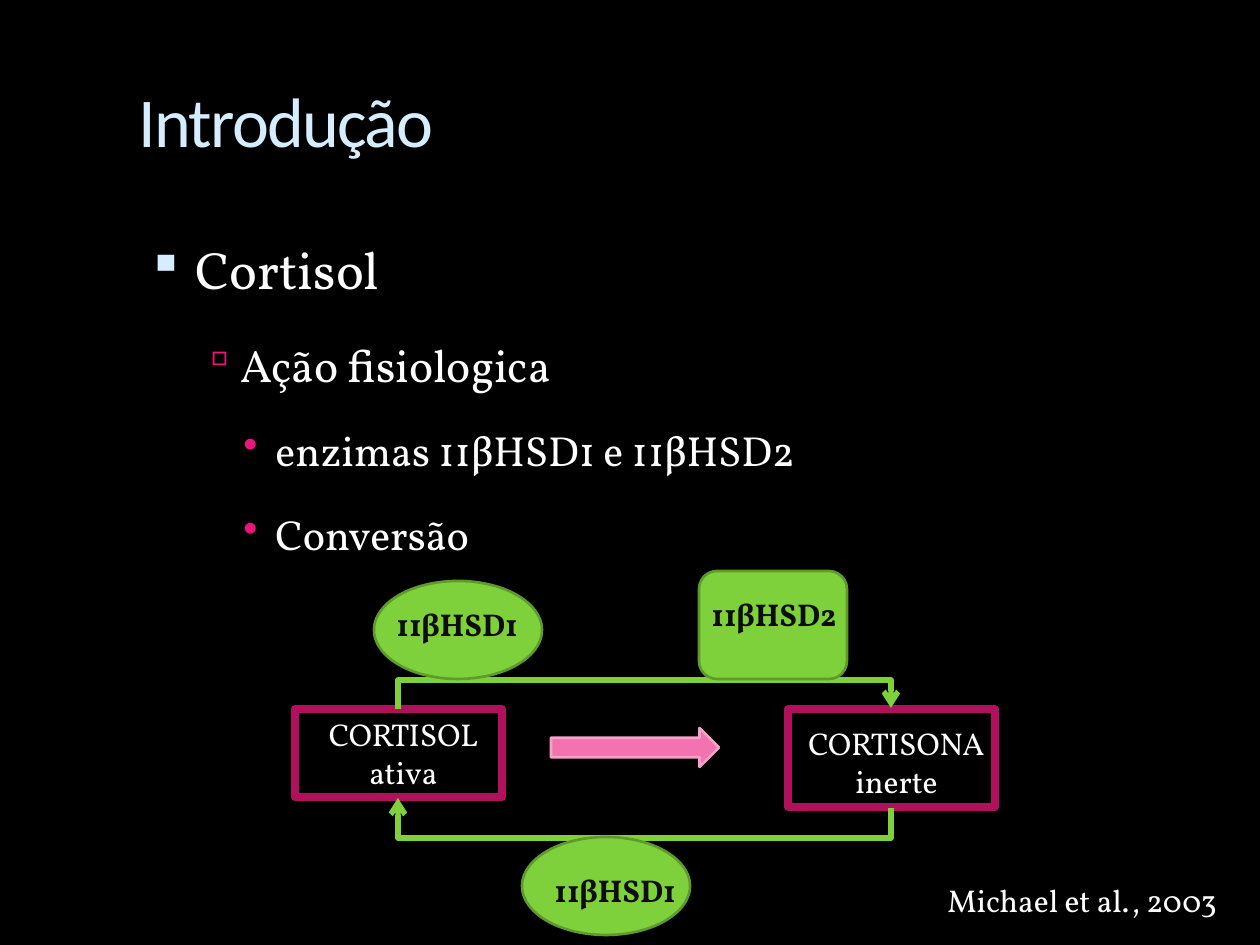
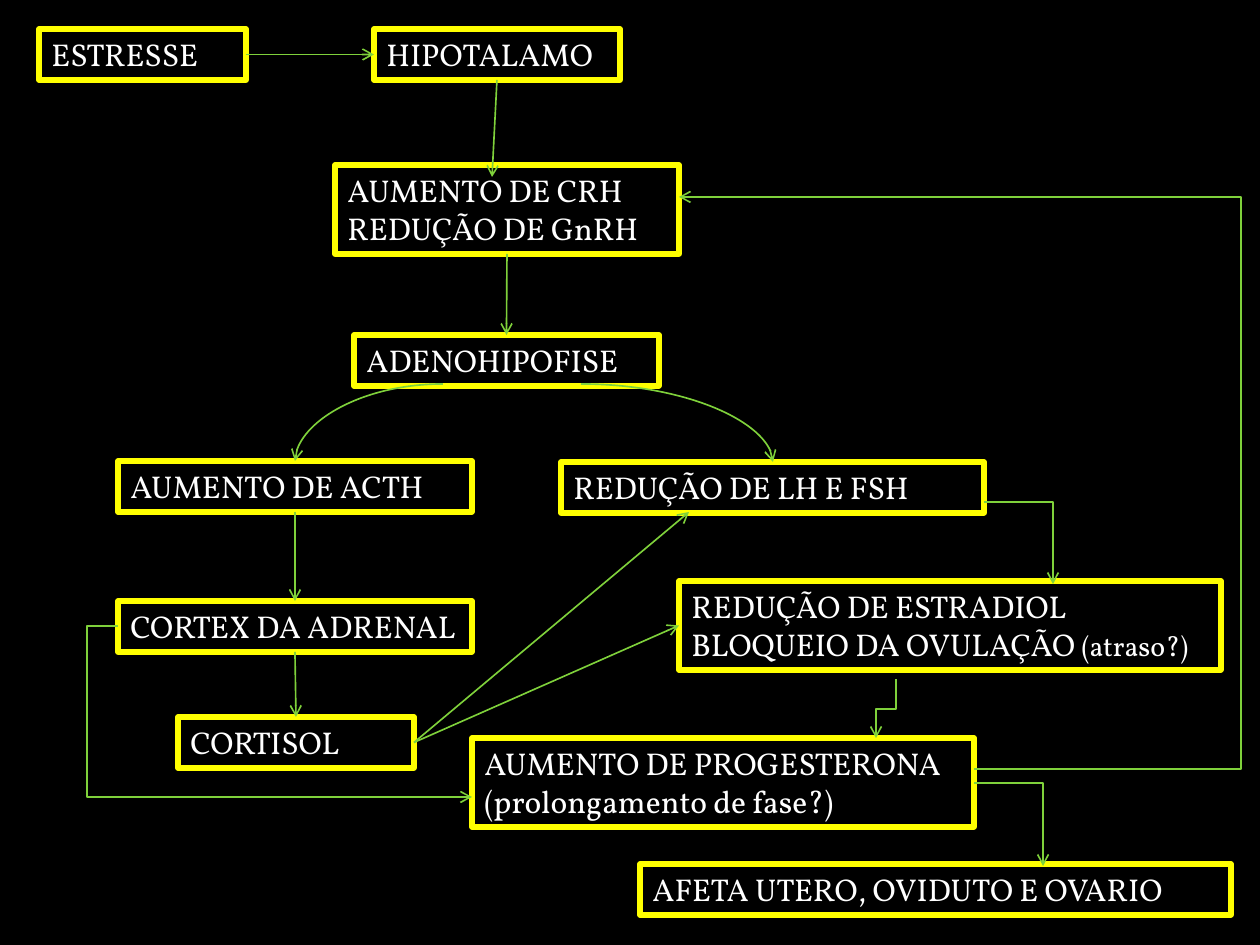
from pptx import Presentation
from pptx.dml.color import RGBColor
from pptx.enum.shapes import MSO_CONNECTOR, MSO_SHAPE
from pptx.enum.text import MSO_ANCHOR, PP_ALIGN
from pptx.oxml.ns import qn
from pptx.util import Pt
from lxml.etree import SubElement

SCALE = 914400 / 126  # EMU per px
BLACK = RGBColor(0, 0, 0)
WHITE = RGBColor(255, 255, 255)
INK = RGBColor(0x0D, 0x0D, 0x0D)
PALE_BLUE = RGBColor(0xD6, 0xEC, 0xFF)
MAGENTA = RGBColor(0xEA, 0x15, 0x7A)
DARK_MAGENTA = RGBColor(0xB0, 0x10, 0x5C)
PINK = RGBColor(0xF2, 0x73, 0xAF)
LIGHT_PINK = RGBColor(0xF7, 0xA1, 0xCA)
GREEN = RGBColor(0x7F, 0xD1, 0x3B)
DARK_GREEN = RGBColor(0x5E, 0x9B, 0x2C)
YELLOW = RGBColor(255, 255, 0)
BODY_FONT, TITLE_FONT = "Vollkorn", "Calibri"
TOP, LEFT, BOTTOM, RIGHT = range(4)
THIN = 0.94


def emu(*lengths):
    return [round(length * SCALE) for length in lengths]


def add_page(deck, layout):
    page = deck.slides.add_slide(deck.slide_layouts[layout])
    page.background.fill.solid()
    page.background.fill.fore_color.rgb = BLACK
    return page


def write(para, text, size=18, color=WHITE, font=BODY_FONT, bold=False):
    span = para.add_run()
    span.text = text
    span.font.size = Pt(size)
    span.font.color.rgb = color
    span.font.name = font
    span.font.bold = bold
    return span


def add_title(page, text):
    title = page.shapes.title
    title.left, title.top, title.width, title.height = emu(126, 71, 1071, 126)
    title.text_frame.vertical_anchor = MSO_ANCHOR.TOP
    para = title.text_frame.paragraphs[0]
    para.alignment = PP_ALIGN.LEFT
    span = write(para, text, size=40, color=PALE_BLUE, font=TITLE_FONT)
    span.font._element.set("spc", "-100")


def add_text(page, area, *lines, align=PP_ALIGN.LEFT, border=None, **style):
    box = page.shapes.add_textbox(*emu(*area))
    box.text_frame.word_wrap = True
    if border:
        box.line.color.rgb = border
        box.line.width = Pt(3)
    for number, line in enumerate(lines):
        frame = box.text_frame
        para = frame.add_paragraph() if number else frame.paragraphs[0]
        para.alignment = align
        write(para, line, **style)
    return box


def set_bullet(para, mark, color, percent, margin, indent):
    props = para._p.get_or_add_pPr()
    props.set("marL", str(*emu(margin)))
    props.set("indent", str(*emu(indent)))
    tint = SubElement(props, qn("a:buClr"))
    SubElement(tint, qn("a:srgbClr")).set("val", str(color))
    SubElement(props, qn("a:buSzPct")).set("val", str(percent * 1000))
    SubElement(props, qn("a:buChar")).set("char", mark)


def add_outline(page, area, items):
    """Bulleted list; items are (level, text)."""
    # size, line spacing, space before, then the bullet format
    levels = [
        (30, 2.0, 7, ("▪", PALE_BLUE, 95, 57, -48)),
        (26, 1.5, 5.2, ("▫", MAGENTA, 90, 102, -39)),
        (24, 1.5, 4.8, ("•", MAGENTA, 100, 137, -32)),
    ]
    box = add_text(page, area, *[text for _, text in items])
    for para, (level, _) in zip(box.text_frame.paragraphs, items):
        size, spacing, before, bullet = levels[level]
        para.level = level
        para.line_spacing = spacing
        para.space_before = Pt(before)
        para.runs[0].font.size = Pt(size)
        set_bullet(para, *bullet)


def add_figure(page, kind, area, line, fill=None, width=1.5):
    figure = page.shapes.add_shape(kind, *emu(*area))
    figure.shadow.inherit = False
    if fill is None:
        figure.fill.background()
    else:
        figure.fill.solid()
        figure.fill.fore_color.rgb = fill
    figure.line.color.rgb = line
    figure.line.width = Pt(width)


def style_arrow(arrow, width):
    arrow.line.color.rgb = GREEN
    arrow.line.width = Pt(width)
    props = arrow.element.spPr
    SubElement(props.find(qn("a:ln")), qn("a:tailEnd")).set("type", "arrow")
    SubElement(props, qn("a:effectLst"))


def add_arrow(page, start, end):
    """Straight arrow; each end is a (box, side) pair or an (x, y) point."""
    arrow = page.shapes.add_connector(MSO_CONNECTOR.STRAIGHT, 0, 0, 0, 0)
    if isinstance(start[0], int):
        arrow.begin_x, arrow.begin_y = emu(*start)
    else:
        arrow.begin_connect(*start)
    if isinstance(end[0], int):
        arrow.end_x, arrow.end_y = emu(*end)
    else:
        arrow.end_connect(*end)
    style_arrow(arrow, THIN)


def add_route(page, start, end, via_x=None, via_y=None, curved=False, width=THIN):
    """Arrow with one corner, or two on the line x = via_x or y = via_y."""
    (x0, y0), (x1, y1) = start, end
    dx, dy = x1 - x0, y1 - y0
    if via_y is not None:  # leaves vertically: lay it flat, then turn it by 90°
        mid_x, mid_y = (x0 + x1) / 2, (y0 + y1) / 2
        start = mid_x - dy / 2, mid_y + dx / 2
        end = mid_x + dy / 2, mid_y - dx / 2
    kind = MSO_CONNECTOR.CURVE if curved else MSO_CONNECTOR.ELBOW
    route = page.shapes.add_connector(kind, *emu(*start, *end))
    geometry = route.element.spPr.find(qn("a:prstGeom"))
    if via_x is None and via_y is None:
        geometry.set("prst", "curvedConnector2" if curved else "bentConnector2")
    else:
        share = (via_x - x0) / dx if via_y is None else (via_y - y0) / dy
        guide = SubElement(geometry.get_or_add_avLst(), qn("a:gd"))
        guide.set("name", "adj1")
        guide.set("fmla", f"val {round(share * 100000)}")
    if via_y is not None:
        route.rotation = 90 if hasattr(type(route), "rotation") else 0
        route.element.spPr.find(qn("a:xfrm")).set("rot", "5400000")
    style_arrow(route, width)


def build_introduction(deck):
    page = add_page(deck, 5)
    add_title(page, "Introdução")
    add_outline(page, (126, 168, 1071, 630), [
        (0, "Cortisol"),
        (1, "Ação fisiologica"),
        (2, "enzimas 11βHSD1 e 11βHSD2"),
        (2, "Conversão"),
    ])
    center = PP_ALIGN.CENTER
    add_text(page, (305, 709, 197, 89), "CORTISOL ativa", align=center)
    add_figure(page, MSO_SHAPE.RIGHT_ARROW, (551, 728, 168, 39), LIGHT_PINK, PINK)
    add_text(page, (788, 718, 217, 89), "CORTISONA inerte", align=center)
    for frame in [(295, 709, 207, 88), (788, 709, 207, 98)]:
        add_figure(page, MSO_SHAPE.RECTANGLE, frame, DARK_MAGENTA, width=4.5)
    add_route(page, (398, 709), (891, 708), via_y=680, width=3)
    add_route(page, (891, 808), (398, 798), via_y=838, width=3)
    enzymes = [
        (MSO_SHAPE.OVAL, (374, 581, 168, 98), (384, 599, 158, 51), "11βHSD1"),
        (MSO_SHAPE.OVAL, (522, 837, 168, 98), (542, 865, 148, 51), "11βHSD1"),
        (MSO_SHAPE.ROUNDED_RECTANGLE, (699, 571, 148, 108), (699, 589, 168, 51),
         "11βHSD2"),
    ]
    for kind, area, label_area, name in enzymes:
        add_figure(page, kind, area, DARK_GREEN, GREEN)
        add_text(page, label_area, name, color=INK, bold=True)
    add_text(page, (935, 875, 315, 51), "Michael et al., 2003")


def build_stress_pathway(deck):
    page = add_page(deck, 6)

    def step(left, top, width, *lines):
        height = 89 if len(lines) > 1 else 51
        return add_text(page, (left, top, width, height), *lines, border=YELLOW)

    stress = step(39, 29, 207, "ESTRESSE")
    hypothalamus = step(374, 29, 246, "HIPOTALAMO")
    crh = step(335, 165, 344, "AUMENTO DE CRH", "REDUÇÃO DE GnRH")
    pituitary = step(354, 335, 305, "ADENOHIPOFISE")
    acth = step(118, 461, 354, "AUMENTO DE ACTH")
    step(561, 462, 423, "REDUÇÃO DE LH E FSH")
    estradiol = step(679, 581, 542, "REDUÇÃO DE ESTRADIOL", "BLOQUEIO DA OVULAÇÃO ")
    write(estradiol.text_frame.paragraphs[1], "(atraso?)", size=16)
    cortex = step(118, 601, 354, "CORTEX DA ADRENAL")
    cortisol = step(178, 717, 236, "CORTISOL")
    step(472, 738, 502, "AUMENTO DE PROGESTERONA", "(prolongamento de fase?)")
    step(640, 864, 591, "AFETA UTERO, OVIDUTO E OVARIO")

    add_arrow(page, (stress, RIGHT), (hypothalamus, LEFT))
    add_arrow(page, (hypothalamus, BOTTOM), (492, 177))
    for upper, lower in [(crh, pituitary), (acth, cortex), (cortex, cortisol)]:
        add_arrow(page, (upper, BOTTOM), (lower, TOP))
    add_arrow(page, (cortisol, RIGHT), (689, 512))
    add_arrow(page, (cortisol, RIGHT), (estradiol, LEFT))

    add_route(page, (581, 384), (773, 462), curved=True)
    add_route(page, (443, 384), (295, 461), curved=True)
    add_route(page, (984, 502), (1053, 584))
    add_route(page, (974, 783), (1043, 866))
    add_route(page, (896, 679), (876, 738), via_y=709)
    add_route(page, (118, 626), (472, 797), via_x=87)
    add_route(page, (974, 769), (679, 197), via_x=1241)


def main():
    deck = Presentation()
    deck.slide_width, deck.slide_height = emu(1260, 945)
    build_introduction(deck)
    build_stress_pathway(deck)
    deck.save("out.pptx")


if __name__ == "__main__":
    main()
